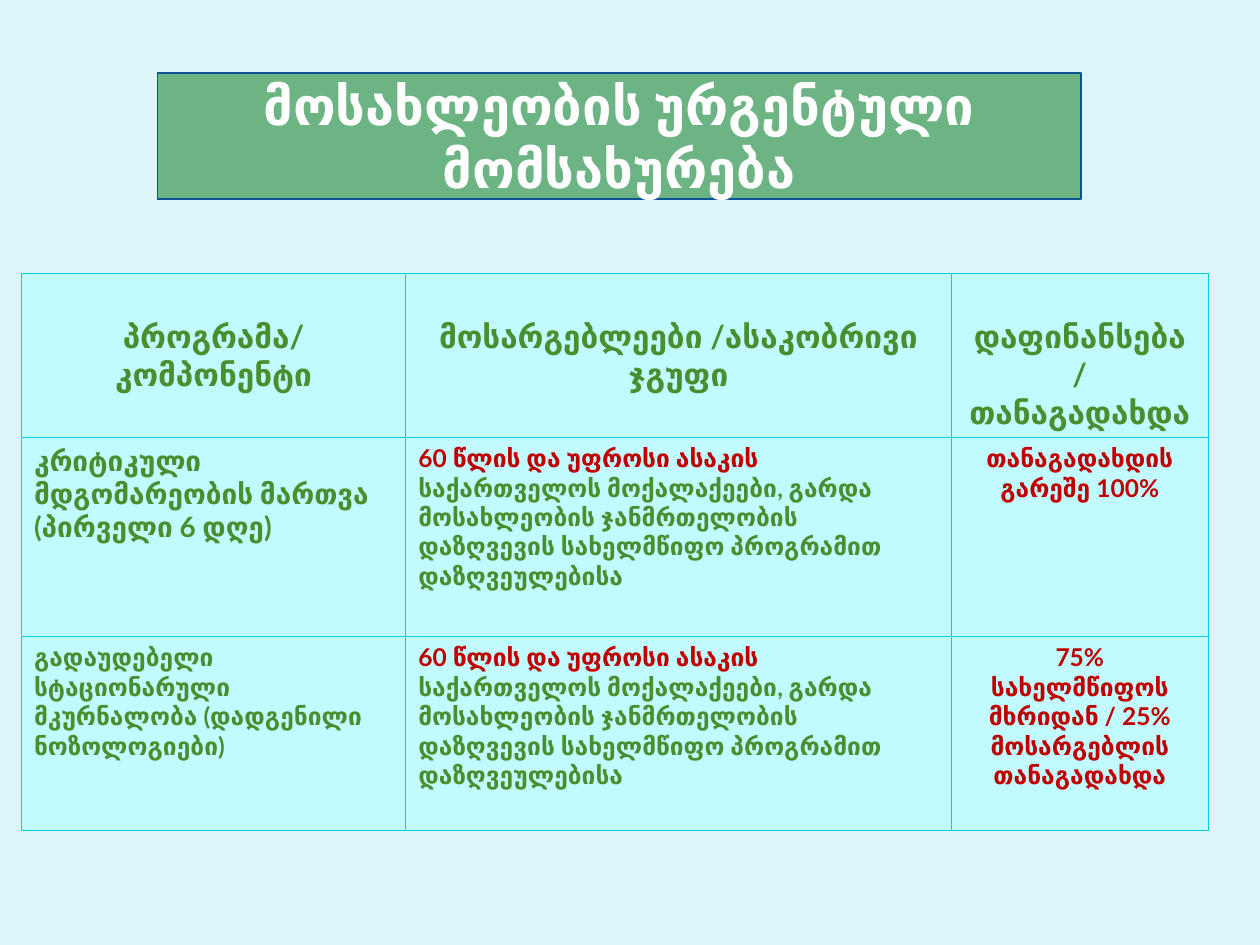
from typing import NamedTuple

from lxml.etree import SubElement
from pptx import Presentation
from pptx.dml.color import RGBColor
from pptx.enum.shapes import MSO_SHAPE as Shape
from pptx.enum.text import MSO_ANCHOR as Anchor, PP_ALIGN as Align
from pptx.oxml.ns import qn
from pptx.util import Inches, Pt

BACKGROUND = RGBColor(0xDB, 0xF5, 0xF9)
TITLE_FILL = RGBColor(0x6C, 0xB4, 0x84)
TITLE_LINE = RGBColor(0x0B, 0x53, 0x94)
CELL_FILL = RGBColor(0xC2, 0xFB, 0xFF)
BORDER = RGBColor(0x06, 0xD0, 0xD9)
WHITE = RGBColor(0xFF, 0xFF, 0xFF)
GREEN = RGBColor(0x48, 0x8F, 0x30)
RED = RGBColor(0xC0, 0x00, 0x00)

COLUMNS = (3.05, 4.33, 2.04)
ROWS = (1.3, 1.58, 1.54)
HEADER_TOP = 0.35


class Run(NamedTuple):
    text: str
    color: RGBColor = GREEN


class Cell(NamedTuple):
    runs: tuple[Run, ...]
    size: int = 14
    align: Align = Align.LEFT


def header(text: str) -> Cell:
    return Cell((Run(text),), 18, Align.CENTER)


def funding(text: str) -> Cell:
    return Cell((Run(text, RED),), align=Align.CENTER)


BENEFICIARIES = Cell((
    Run("60 წლის და უფროსი ასაკის ", RED),
    Run("საქართველოს მოქალაქეები, გარდა მოსახლეობის ჯანმრთელობის "
        "დაზღვევის სახელმწიფო პროგრამით დაზღვეულებისა"),
))

PROGRAMS = (
    (header("პროგრამა/კომპონენტი"),
     header("მოსარგებლეები /ასაკობრივი ჯგუფი"),
     header("დაფინანსება / თანაგადახდა")),
    (Cell((Run("კრიტიკული მდგომარეობის მართვა (პირველი 6 დღე)"),), 16),
     BENEFICIARIES,
     funding("თანაგადახდის გარეშე 100%")),
    (Cell((Run("გადაუდებელი სტაციონარული მკურნალობა (დადგენილი ნოზოლოგიები)"),)),
     BENEFICIARIES,
     funding("75% სახელმწიფოს მხრიდან / 25% მოსარგებლის თანაგადახდა")),
)


def write(tf, content: Cell) -> None:
    tf.word_wrap = True
    p = tf.paragraphs[0]
    p.alignment = content.align
    for text, color in content.runs:
        r = p.add_run()
        r.text = text
        r.font.color.rgb = color
        for name, value in dict(name="Lato", size=Pt(content.size), bold=True).items():
            setattr(r.font, name, value)


def set_borders(cell) -> None:
    """Put the four lines ahead of the fill, as the schema orders them."""
    tc_pr = cell._tc.get_or_add_tcPr()
    for i, side in enumerate(("lnL", "lnR", "lnT", "lnB")):
        ln = SubElement(tc_pr, qn(f"a:{side}"), w=str(Pt(0.75)))
        SubElement(SubElement(ln, qn("a:solidFill")), qn("a:srgbClr"), val=str(BORDER))
        tc_pr.insert(i, ln)


def add_title(slide, text: str) -> None:
    sp = slide.shapes.add_shape(
        Shape.RECTANGLE, Inches(1.25), Inches(0.58), Inches(7.33), Inches(1))
    sp.shadow.inherit = False
    sp.fill.solid()
    sp.fill.fore_color.rgb = TITLE_FILL
    sp.line.color.rgb = TITLE_LINE
    sp.line.width = Pt(0.75)
    sp.text_frame.vertical_anchor = Anchor.MIDDLE
    write(sp.text_frame, Cell((Run(text, WHITE),), 30, Align.CENTER))


def add_program_table(slide) -> None:
    table = slide.shapes.add_table(
        len(ROWS), len(COLUMNS), Inches(0.17), Inches(2.17),
        Inches(sum(COLUMNS)), Inches(sum(ROWS))).table
    for column, width in zip(table.columns, COLUMNS):
        column.width = Inches(width)
    for i, (row, height, contents) in enumerate(zip(table.rows, ROWS, PROGRAMS)):
        row.height = Inches(height)
        for cell, content in zip(row.cells, contents):
            cell.fill.solid()
            cell.fill.fore_color.rgb = CELL_FILL
            set_borders(cell)
            if i == 0:
                cell.margin_top = Inches(HEADER_TOP)
            write(cell.text_frame, content)


def main() -> None:
    prs = Presentation()
    prs.slide_width, prs.slide_height = Inches(10), Inches(7.5)
    slide = prs.slides.add_slide(prs.slide_layouts[6])
    slide.background.fill.solid()
    slide.background.fill.fore_color.rgb = BACKGROUND
    add_title(slide, "მოსახლეობის ურგენტული მომსახურება")
    add_program_table(slide)
    prs.save("out.pptx")


if __name__ == "__main__":
    main()
